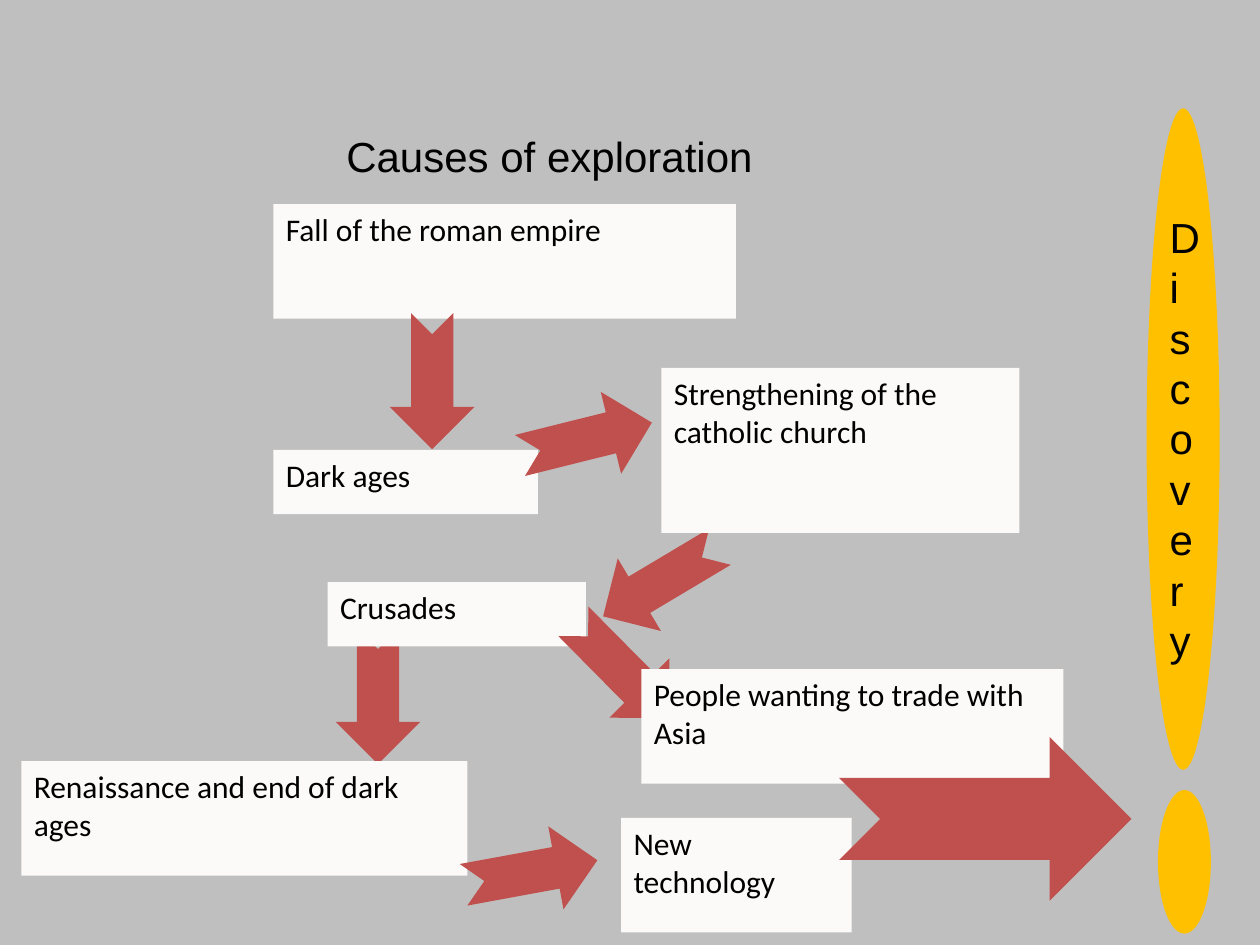
from dataclasses import dataclass

from pptx import Presentation
from pptx.dml.color import RGBColor
from pptx.enum import shapes, text
from pptx.util import Inches, Pt


@dataclass(frozen=True)
class Theme:
    background: str = "BFBFBF"
    card: str = "FBFAF8"
    arrow: str = "C0504D"
    accent: str = "FFC000"
    ink: str = "000000"
    heading_font: str = "Arial"
    body_font: str = "Calibri"
    heading_size: int = 24
    body_size: int = 18


@dataclass(frozen=True)
class Cause:
    label: str
    left: float
    top: float
    width: float
    height: float = 0.91


@dataclass(frozen=True)
class Arrow:
    left: float
    top: float
    rotation: float = 0
    width: float = 1.08
    height: float = 0.67


THEME = Theme()

CHAIN = [
    Cause("Fall of the roman empire", 2.17, 1.62, 3.67),
    Arrow(4.71, 4.28, 149.2),
    Cause("Dark ages", 2.17, 3.57, 2.1, 0.51),
    Arrow(4.11, 3.15, 346),
    Cause("Strengthening of the catholic church", 5.25, 2.92, 2.84, 1.31),
    Arrow(2.46, 5.19, 90),
    Cause("Crusades", 2.6, 4.62, 2.05, 0.51),
    Arrow(2.89, 2.69, 90),
    Cause("Renaissance and end of dark ages", 0.17, 6.04, 3.54),
    Arrow(3.67, 6.59, 349.6),
    Cause("New technology", 4.93, 6.49, 1.83),
    Arrow(4.39, 4.98, 45.3),
    Cause("People wanting to trade with Asia", 5.09, 5.31, 3.35),
    Arrow(6.66, 5.85, width=2.32, height=1.3),
]


def write(holder, words: str, font: str, size: int) -> None:
    """Write one left-aligned run at the top of a shape."""
    frame = holder.text_frame
    frame.word_wrap = True
    frame.auto_size = text.MSO_AUTO_SIZE.NONE
    frame.vertical_anchor = text.MSO_ANCHOR.TOP
    paragraph = frame.paragraphs[0]
    paragraph.alignment = text.PP_ALIGN.LEFT
    run = paragraph.add_run()
    run.text = words
    run.font.name = font
    run.font.size = Pt(size)
    run.font.color.rgb = RGBColor.from_string(THEME.ink)


def add_solid(slide, preset, colour: str, left: float, top: float,
              width: float, height: float):
    """Add a flat, unlined preset shape."""
    solid = slide.shapes.add_shape(
        preset, Inches(left), Inches(top), Inches(width), Inches(height))
    solid.shadow.inherit = False
    solid.fill.solid()
    solid.fill.fore_color.rgb = RGBColor.from_string(colour)
    solid.line.fill.background()
    return solid


def add_cause(slide, cause: Cause) -> None:
    """Draw a labelled cause card."""
    card = add_solid(slide, shapes.MSO_SHAPE.RECTANGLE, THEME.card,
                     cause.left, cause.top, cause.width, cause.height)
    write(card, cause.label, THEME.body_font, THEME.body_size)


def add_arrow(slide, arrow: Arrow) -> None:
    """Draw a notched arrow leading to the next cause."""
    pointer = add_solid(slide, shapes.MSO_SHAPE.NOTCHED_RIGHT_ARROW, THEME.arrow,
                        arrow.left, arrow.top, arrow.width, arrow.height)
    pointer.rotation = arrow.rotation


def main() -> None:
    """Build the causes of exploration slide."""
    deck = Presentation()
    deck.slide_width, deck.slide_height = Inches(10), Inches(7.5)
    slide = deck.slides.add_slide(deck.slide_layouts[6])
    slide.background.fill.solid()
    slide.background.fill.fore_color.rgb = RGBColor.from_string(THEME.background)

    title = slide.shapes.add_textbox(
        Inches(2.65), Inches(0.99), Inches(3.75), Inches(0.51))
    write(title, "Causes of exploration", THEME.heading_font, THEME.heading_size)

    for step in CHAIN:
        if isinstance(step, Cause):
            add_cause(slide, step)
        else:
            add_arrow(slide, step)

    exclamation_stroke = add_solid(
        slide, shapes.MSO_SHAPE.OVAL, THEME.accent, 9.1, 0.86, 0.58, 5.25)
    write(exclamation_stroke, "Discovery", THEME.heading_font, THEME.heading_size)
    add_solid(slide, shapes.MSO_SHAPE.OVAL, THEME.accent, 9.19, 6.27, 0.42, 1.14)

    deck.save("out.pptx")


if __name__ == "__main__":
    main()
